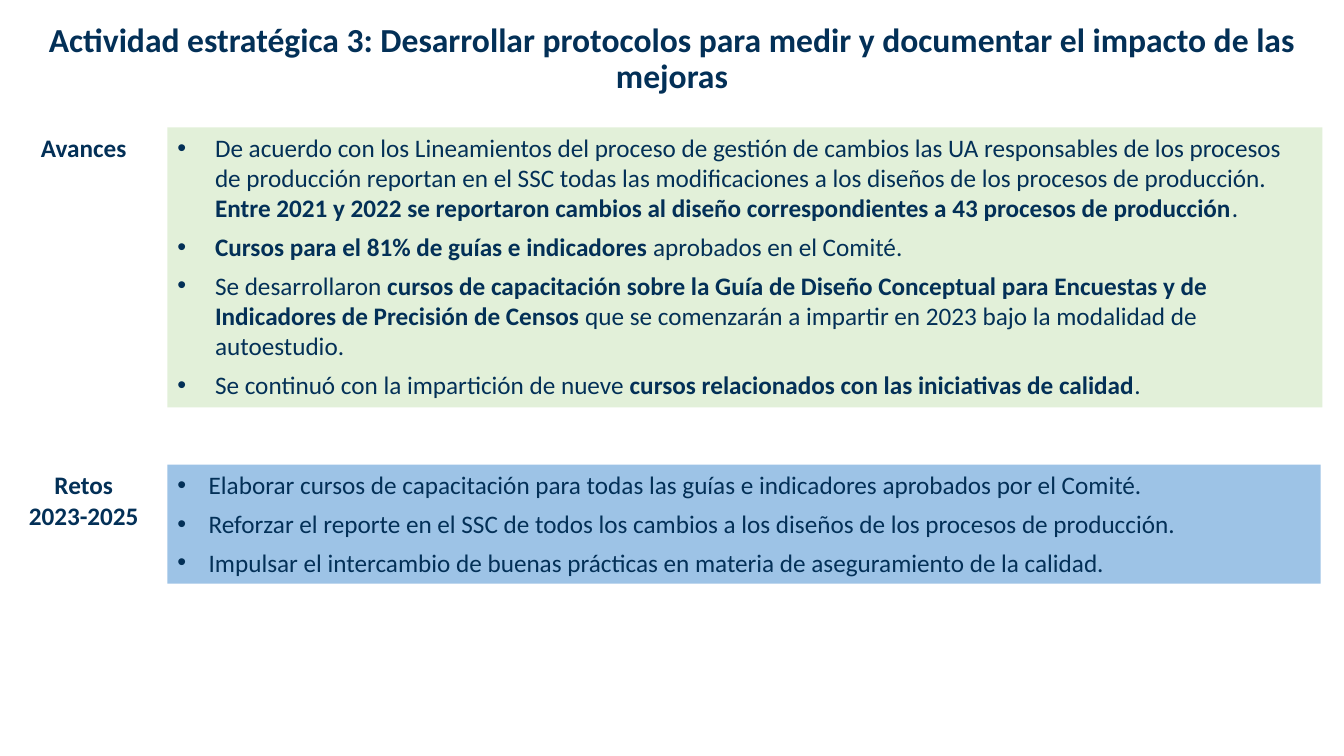
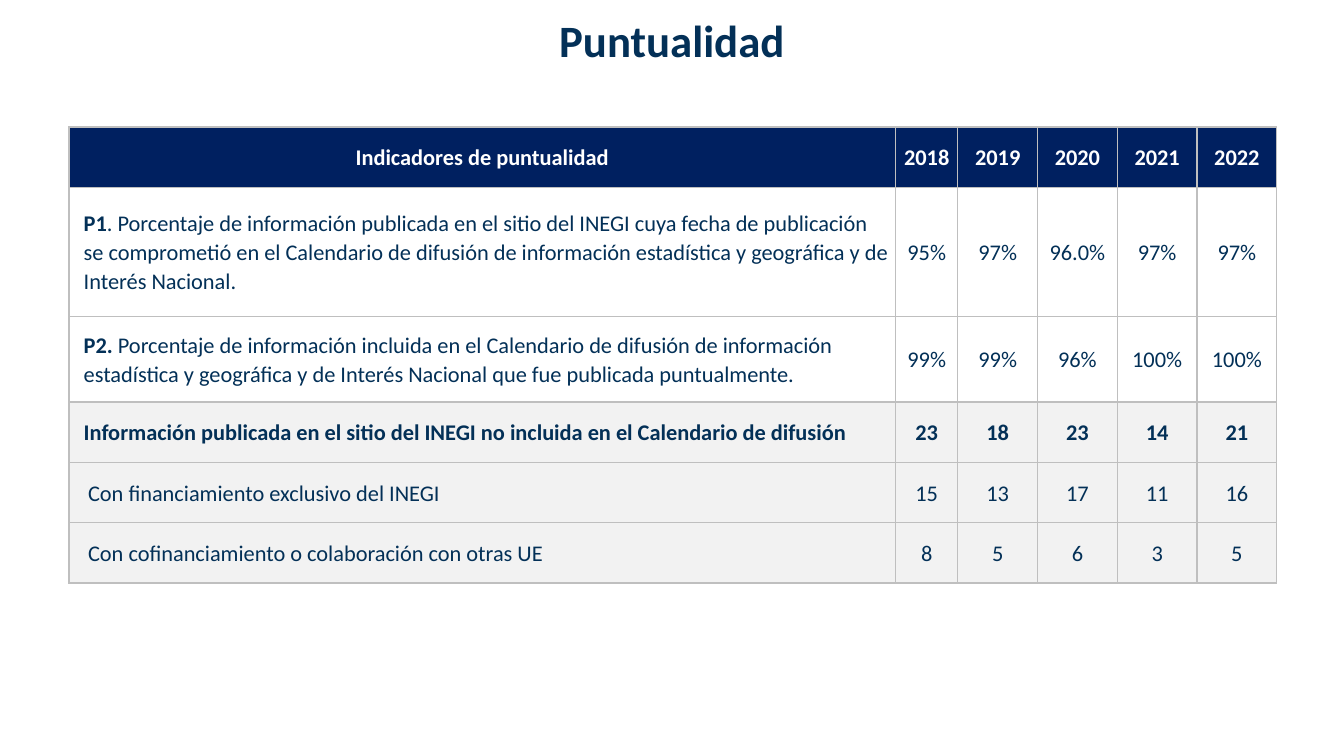
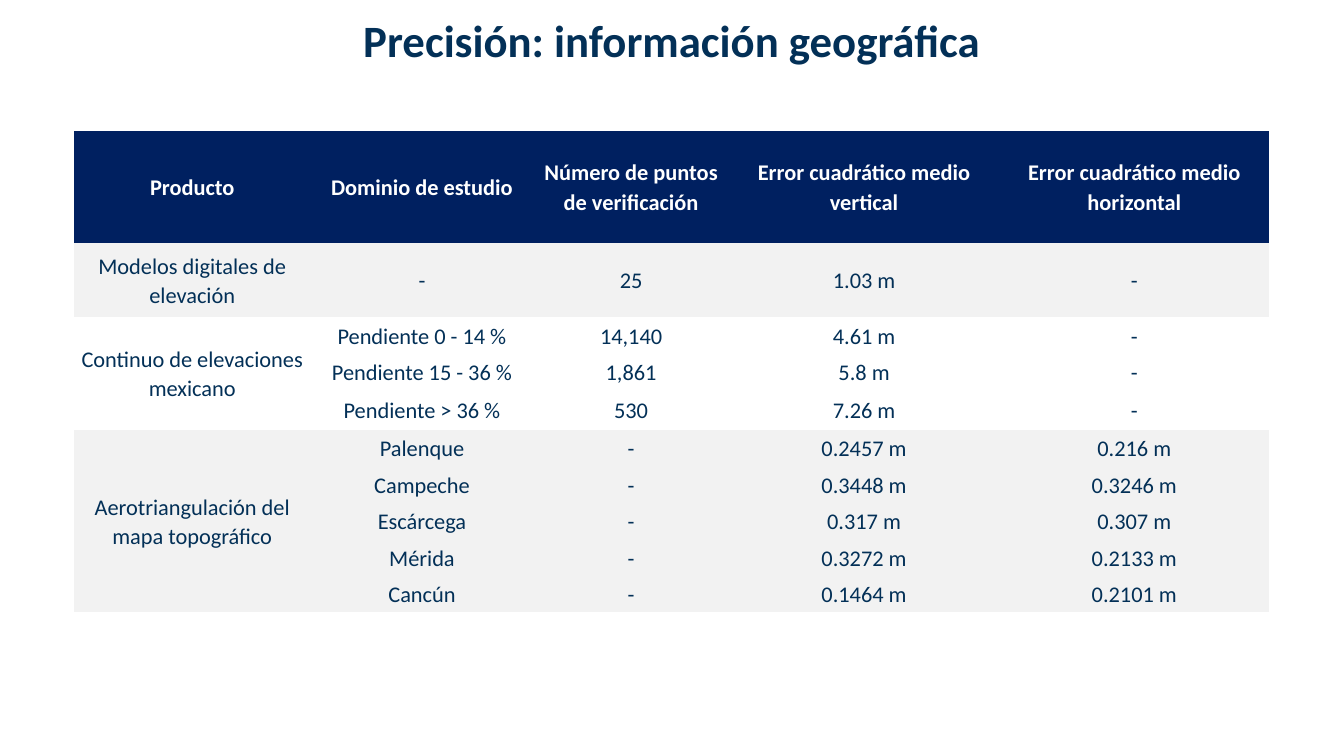
from pptx import Presentation
from pptx.dml.color import RGBColor
from pptx.enum.shapes import MSO_SHAPE
from pptx.enum.text import MSO_ANCHOR, PP_ALIGN
from pptx.oxml import parse_xml
from pptx.oxml.ns import nsdecls
from pptx.util import Cm, Pt

NAVY = RGBColor(0x03, 0x30, 0x57)
HEADER = RGBColor(0x00, 0x20, 0x60)
WHITE = RGBColor(0xFF, 0xFF, 0xFF)
GRAY = RGBColor(0xF2, 0xF2, 0xF2)
BORDER = RGBColor(0xBF, 0xBF, 0xBF)
GREEN = RGBColor(0xE2, 0xF0, 0xD9)
BLUE = RGBColor(0x9D, 0xC3, 0xE6)

RECTANGLE = MSO_SHAPE.RECTANGLE
LEFT, CENTER = PP_ALIGN.LEFT, PP_ALIGN.CENTER
TOP, MIDDLE = MSO_ANCHOR.TOP, MSO_ANCHOR.MIDDLE

FONT = "Calibri"
PLAIN_TABLE = "{2D5ABB26-0587-4C30-8999-92F81FD0307C}"
SLIDE_W, SLIDE_H = 33.87, 19.05
LABEL_W = 4.22

ADVANCES = [
    "De acuerdo con los Lineamientos del proceso de gestión de cambios las UA responsables "
    "de los procesos de producción reportan en el SSC todas las modificaciones a los diseños "
    "de los procesos de producción. **Entre 2021 y 2022 se reportaron cambios al diseño "
    "correspondientes a 43 procesos de producción**.",
    "**Cursos para el 81% de guías e indicadores** aprobados en el Comité.",
    "Se desarrollaron **cursos de capacitación sobre la Guía de Diseño Conceptual para "
    "Encuestas y de Indicadores de Precisión de Censos** que se comenzarán a impartir en 2023 "
    "bajo la modalidad de autoestudio.",
    "Se continuó con la impartición de nueve **cursos relacionados con las iniciativas de "
    "calidad**.",
]
CHALLENGES = [
    "Elaborar cursos de capacitación para todas las guías e indicadores aprobados por el Comité.",
    "Reforzar el reporte en el SSC de todos los cambios a los diseños de los procesos de "
    "producción.",
    "Impulsar el intercambio de buenas prácticas en materia de aseguramiento de la calidad.",
]
PUNCTUALITY = [
    ["Indicadores de puntualidad", "2018", "2019", "2020", "2021", "2022"],
    ["**P1**. Porcentaje de información publicada en el sitio del INEGI cuya fecha de "
     "publicación se comprometió en el Calendario de difusión de información estadística y "
     "geográfica y de Interés Nacional.", "95%", "97%", "96.0%", "97%", "97%"],
    ["**P2.** Porcentaje de información incluida en el Calendario de difusión de información "
     "estadística y geográfica y de Interés Nacional que fue publicada puntualmente.",
     "99%", "99%", "96%", "100%", "100%"],
    ["Información publicada en el sitio del INEGI no incluida en el Calendario de difusión",
     "23", "18", "23", "14", "21"],
    ["Con financiamiento exclusivo del INEGI", "15", "13", "17", "11", "16"],
    ["Con cofinanciamiento o colaboración con otras UE", "8", "5", "6", "3", "5"],
]
PRECISION = [
    ["Producto", "Dominio de estudio", "Número de puntos de verificación",
     "Error cuadrático medio vertical", "Error cuadrático medio horizontal"],
    ["Modelos digitales de elevación", "-", "25", "1.03 m", "-"],
    ["Continuo de elevaciones mexicano", "Pendiente 0 - 14 %", "14,140", "4.61 m", "-"],
    ["", "Pendiente 15 - 36 %", "1,861", "5.8 m", "-"],
    ["", "Pendiente > 36 %", "530", "7.26 m", "-"],
    ["Aerotriangulación del mapa topográfico", "Palenque", "-", "0.2457 m", "0.216 m"],
    ["", "Campeche", "-", "0.3448 m", "0.3246 m"],
    ["", "Escárcega", "-", "0.317 m", "0.307 m"],
    ["", "Mérida", "-", "0.3272 m", "0.2133 m"],
    ["", "Cancún", "-", "0.1464 m", "0.2101 m"],
]


class Deck:
    """Shared style plus the slide being filled."""

    def __init__(self):
        self.prs = Presentation()
        self.prs.slide_width, self.prs.slide_height = Cm(SLIDE_W), Cm(SLIDE_H)

    def add_slide(self, title, size=32, top=0.36):
        self.s = self.prs.slides.add_slide(self.prs.slide_layouts[6])
        tf = self.text_box(0, top, SLIDE_W, 1.6, [title], size)
        tf.paragraphs[0].line_spacing = 0.9

    def fill_paragraph(self, p, text, size, color=NAVY, bold=False, align=LEFT):
        """Add the text as runs; parts between ** marks are bold."""
        p.alignment = align
        for i, part in enumerate(text.split("**")):
            if part:
                r = p.add_run()
                r.text = part
                r.font.name, r.font.size = FONT, Pt(size)
                r.font.bold = bold or i % 2 == 1
                r.font.color.rgb = color

    def indent(self, p, left, first=0):
        pPr = p._p.get_or_add_pPr()
        pPr.set("marL", str(Cm(left)))
        pPr.set("indent", str(Cm(first)))
        return pPr

    def paragraphs(self, tf, count):
        tf.word_wrap = True
        tf.vertical_anchor = TOP
        return [tf.paragraphs[0]] + [tf.add_paragraph() for _ in range(count - 1)]

    def text_box(self, x, y, w, h, lines, size):
        tf = self.s.shapes.add_textbox(Cm(x), Cm(y), Cm(w), Cm(h)).text_frame
        for p, line in zip(self.paragraphs(tf, len(lines)), lines):
            self.fill_paragraph(p, line, size, bold=True, align=CENTER)
        return tf

    def bullet_panel(self, y, w, h, label, items, color, hang):
        """Bold label on the left, coloured bullet panel on the right."""
        sp = self.s.shapes.add_shape(RECTANGLE, Cm(LABEL_W), Cm(y), Cm(w), Cm(h))
        sp.shadow.inherit = False
        sp.fill.solid()
        sp.fill.fore_color.rgb = color
        sp.line.fill.background()
        for p, item in zip(self.paragraphs(sp.text_frame, len(items)), items):
            pPr = self.indent(p, hang, -hang)
            pPr.append(parse_xml(f'<a:buFont {nsdecls("a")} typeface="Arial"/>'))
            pPr.append(parse_xml(f'<a:buChar {nsdecls("a")} char="•"/>'))
            p.space_after = Pt(6)
            self.fill_paragraph(p, item, 18)
        self.text_box(0, y, LABEL_W, 0.26 + 0.77 * len(label), label, 18)

    def border(self, cell):
        tcPr = cell._tc.get_or_add_tcPr()
        for side in "LRTB":
            tcPr.append(parse_xml(
                f'<a:ln{side} {nsdecls("a")} w="{Pt(1)}"><a:solidFill>'
                f'<a:srgbClr val="{BORDER}"/></a:solidFill></a:ln{side}>'))

    def table(self, x, y, widths, heights, rows, gray_rows, bold_rows=(),
              indents=None, bordered=False):
        """Table with a navy header; indents maps a row to its first cell's left indent."""
        indents = indents or {}
        frame = self.s.shapes.add_table(len(rows), len(widths), Cm(x), Cm(y),
                                        Cm(sum(widths)), Cm(sum(heights)))
        frame._element.xpath(".//a:tableStyleId")[0].text = PLAIN_TABLE
        table = frame.table
        table.horz_banding = False
        for column, width in zip(table.columns, widths):
            column.width = Cm(width)
        for i, (row, values) in enumerate(zip(table.rows, rows)):
            row.height = Cm(heights[i])
            for j, (cell, value) in enumerate(zip(row.cells, values)):
                cell.vertical_anchor = MIDDLE
                cell.margin_left = cell.margin_right = Cm(0.12)
                cell.margin_top = cell.margin_bottom = 0
                if bordered:
                    self.border(cell)
                if i == 0 or i in gray_rows:
                    cell.fill.solid()
                    cell.fill.fore_color.rgb = GRAY if i else HEADER
                else:
                    cell.fill.background()
                p = cell.text_frame.paragraphs[0]
                p.line_spacing, p.space_after = 1.07, Pt(8)
                indented = j == 0 and i in indents
                if indented:
                    self.indent(p, indents[i])
                self.fill_paragraph(p, value, 16, NAVY if i else WHITE,
                                    i == 0 or i in bold_rows, LEFT if indented else CENTER)
        return table


def main():
    deck = Deck()

    deck.add_slide("Actividad estratégica 3: Desarrollar protocolos para medir y documentar "
                   "el impacto de las mejoras", size=24, top=0.46)
    deck.bullet_panel(3.21, 29.11, 7.06, ["Avances"], ADVANCES, GREEN, 0.95)
    deck.bullet_panel(11.71, 29.06, 3, ["Retos", "2023-2025"], CHALLENGES, BLUE, 0.79)

    deck.add_slide("Puntualidad")
    deck.table(1.74, 3.2, [20.83, 1.57] + [2.01] * 4, [1.52, 3.25, 2.16] + [1.52] * 3,
               PUNCTUALITY, gray_rows=(3, 4, 5), bold_rows=(3,),
               indents={1: 0.25, 2: 0.25, 3: 0.25, 4: 0.36, 5: 0.36}, bordered=True)

    deck.add_slide("Precisión: información geográfica")
    table = deck.table(1.86, 3.3, [5.97, 5.61, 4.93, 6.81, 6.81],
                       [2.82, 1.88, 0.92, 0.92, 0.99] + [0.92] * 5,
                       PRECISION, gray_rows=(1, 5, 6, 7, 8, 9))
    for first, last in ((2, 4), (5, 9)):
        table.cell(first, 0).merge(table.cell(last, 0))

    deck.prs.save("out.pptx")


if __name__ == "__main__":
    main()
